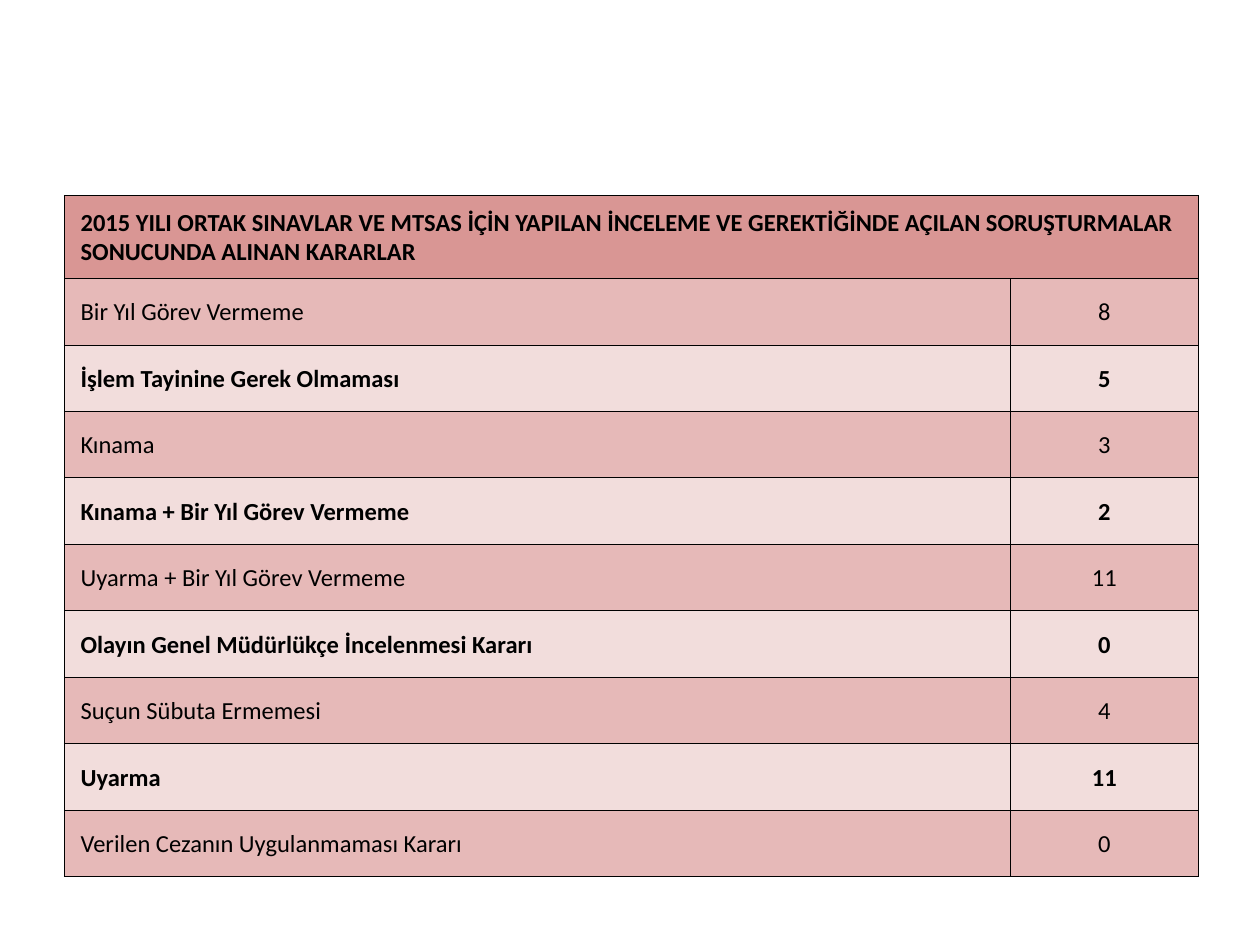
import lxml.etree
import pptx
import pptx.dml.color
import pptx.enum.text
import pptx.oxml.ns
import pptx.util

theme = {
    "font": "Calibri",
    "size": pptx.util.Pt(14),
    "text": "000000",
    "border": "000000",
    "border_width": pptx.util.Pt(0.5),
    "header": "D99694",
    "bands": ["E6B9B8", "F2DDDC"],
}
heading = (
    "2015 YILI ORTAK SINAVLAR VE MTSAS İÇİN YAPILAN İNCELEME VE GEREKTİĞİNDE "
    "AÇILAN SORUŞTURMALAR SONUCUNDA ALINAN KARARLAR"
)
decisions = [
    ("Bir Yıl Görev Vermeme", 8),
    ("İşlem Tayinine Gerek Olmaması", 5),
    ("Kınama", 3),
    ("Kınama + Bir Yıl Görev Vermeme", 2),
    ("Uyarma + Bir Yıl Görev Vermeme", 11),
    ("Olayın Genel Müdürlükçe İncelenmesi Kararı", 0),
    ("Suçun Sübuta Ermemesi", 4),
    ("Uyarma", 11),
    ("Verilen Cezanın Uygulanmaması Kararı", 0),
]


def style_cell(cell, fill):
    properties = cell._tc.get_or_add_tcPr()
    for side in ("lnL", "lnR", "lnT", "lnB"):
        line = lxml.etree.SubElement(properties, pptx.oxml.ns.qn(f"a:{side}"), w=str(theme["border_width"]))
        solid = lxml.etree.SubElement(line, pptx.oxml.ns.qn("a:solidFill"))
        lxml.etree.SubElement(solid, pptx.oxml.ns.qn("a:srgbClr"), val=theme["border"])
    cell.fill.solid()
    cell.fill.fore_color.rgb = pptx.dml.color.RGBColor.from_string(fill)
    cell.vertical_anchor = pptx.enum.text.MSO_ANCHOR.MIDDLE
    cell.margin_left = cell.margin_right = cell.margin_top = pptx.util.Inches(0.01)
    cell.margin_bottom = 0


def write_cell(cell, text, bold, centered):
    paragraph = cell.text_frame.paragraphs[0]
    if centered:
        paragraph.alignment = pptx.enum.text.PP_ALIGN.CENTER
    else:
        paragraph._p.get_or_add_pPr().set("marL", str(pptx.util.Inches(0.12)))
    run = paragraph.add_run()
    run.text = text
    run.font.name = theme["font"]
    run.font.size = theme["size"]
    run.font.bold = bold
    run.font.color.rgb = pptx.dml.color.RGBColor.from_string(theme["text"])


presentation = pptx.Presentation()
presentation.slide_width = pptx.util.Inches(10)
presentation.slide_height = pptx.util.Inches(7.5)
slide = presentation.slides.add_slide(presentation.slide_layouts[6])

left = pptx.util.Inches(0.51)
top = pptx.util.Inches(1.55)
width = int(presentation.slide_width * 0.9)
height = pptx.util.Inches(5.41)
header_height = pptx.util.Inches(0.66)
label_width = pptx.util.Inches(7.51)

table = slide.shapes.add_table(len(decisions) + 1, 2, left, top, width, height).table
table.first_row = False
table.horz_banding = False
table.columns[0].width = label_width
table.columns[1].width = width - label_width
table.rows[0].height = header_height

for cell in table.rows[0].cells:
    style_cell(cell, theme["header"])
table.cell(0, 0).merge(table.cell(0, 1))
write_cell(table.cell(0, 0), heading, True, False)

for index, (decision, count) in enumerate(decisions):
    row = table.rows[index + 1]
    row.height = (height - header_height) // len(decisions)
    band = index % 2
    for cell in row.cells:
        style_cell(cell, theme["bands"][band])
    write_cell(row.cells[0], decision, band == 1, False)
    write_cell(row.cells[1], str(count), band == 1, True)

presentation.save("out.pptx")
